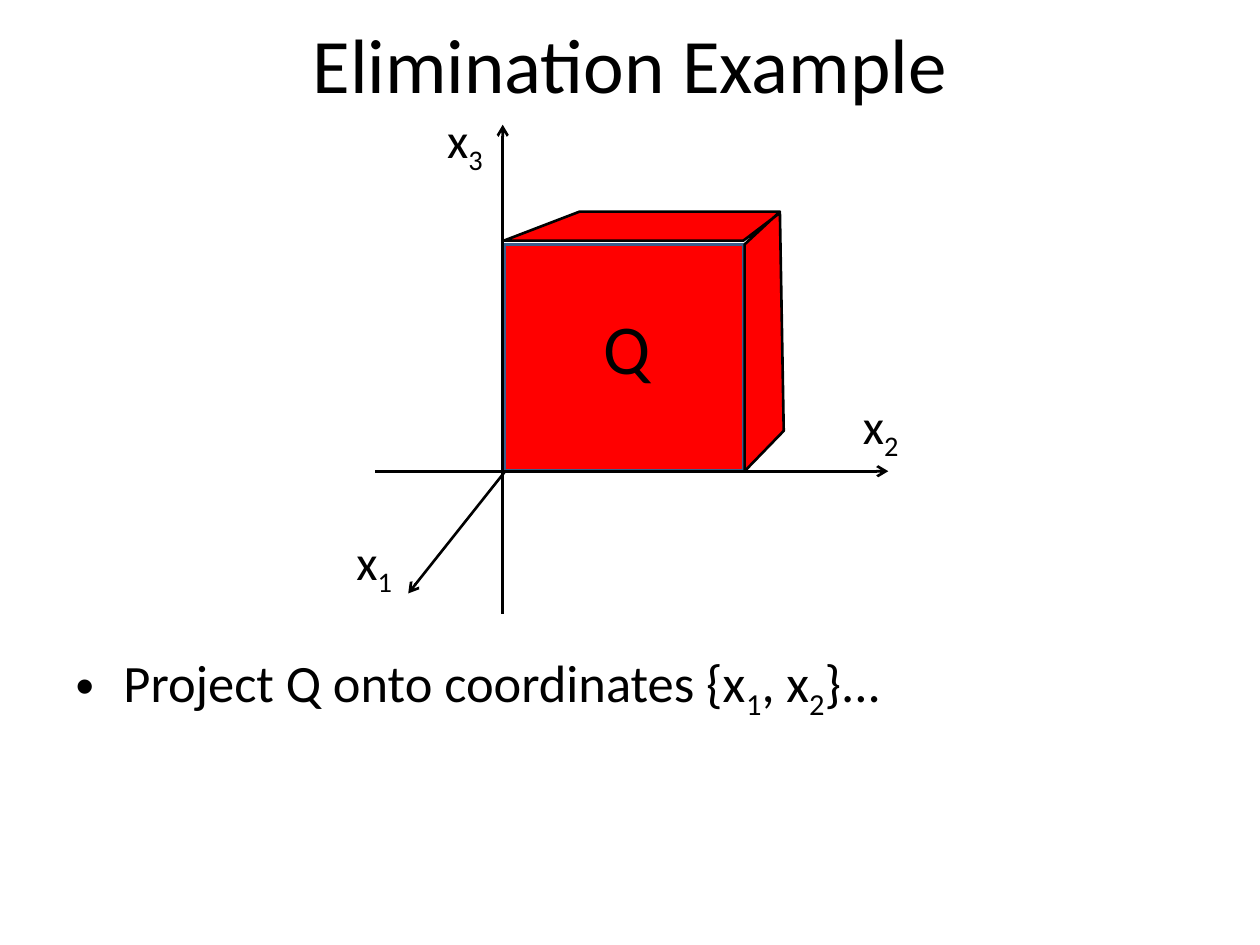
from lxml import etree
from pptx import Presentation
from pptx.dml.color import RGBColor
from pptx.enum.shapes import MSO_CONNECTOR, MSO_SHAPE
from pptx.enum.text import MSO_ANCHOR, MSO_AUTO_SIZE, PP_ALIGN
from pptx.oxml.ns import qn
from pptx.util import Inches, Pt

STRAIGHT = MSO_CONNECTOR.STRAIGHT
RECTANGLE = MSO_SHAPE.RECTANGLE
MIDDLE, TOP = MSO_ANCHOR.MIDDLE, MSO_ANCHOR.TOP
CENTER = PP_ALIGN.CENTER
NO_AUTOFIT, FIT_SHAPE = MSO_AUTO_SIZE.NONE, MSO_AUTO_SIZE.SHAPE_TO_FIT_TEXT

FONT = "Calibri"
COLORS = {"ink": "000000", "solid": "FF0000", "front_edge": "3A5F8C"}


def color(name):
    return RGBColor.from_string(COLORS[name])


def place(shape, box):
    shape.left, shape.top, shape.width, shape.height = map(Inches, box)


def add_runs(paragraph, parts, size):
    """Add text parts in turn; every second part is a subscript."""
    for index, part in enumerate(parts):
        run = paragraph.add_run()
        run.text = part
        run.font.name = FONT
        run.font.size = Pt(size)
        run.font.color.rgb = color("ink")
        if index % 2:
            run.font._element.set("baseline", "-25000")


def paint(shape, fill, line, width):
    shape.shadow.inherit = False
    shape.fill.solid()
    shape.fill.fore_color.rgb = color(fill)
    shape.line.color.rgb = color(line)
    shape.line.width = Pt(width)


def add_axis(slide, start, end):
    axis = slide.shapes.add_connector(STRAIGHT, *map(Inches, start + end))
    axis.line.color.rgb = color("ink")
    axis.line.width = Pt(1.5)
    etree.SubElement(axis.line._get_or_add_ln(), qn("a:tailEnd"), type="arrow")
    etree.SubElement(axis._element.spPr, qn("a:effectLst"))


def add_label(slide, box, parts, size):
    label = slide.shapes.add_textbox(*map(Inches, box))
    label.text_frame.word_wrap = False
    label.text_frame.auto_size = FIT_SHAPE
    add_runs(label.text_frame.paragraphs[0], parts, size)


def fill_title(slide, box, text):
    title = slide.shapes.title
    place(title, box)
    title.text_frame.vertical_anchor = MIDDLE
    paragraph = title.text_frame.paragraphs[0]
    paragraph.alignment = CENTER
    add_runs(paragraph, [text], 44)


def draw_cube_diagram(slide, box):
    left, top, width, height = box

    def at(x, y):
        return left + x, top + y

    # Front face, then the top and right faces as one outline
    front = slide.shapes.add_shape(RECTANGLE, *map(Inches, at(1.27, 1.12) + (1.9, 1.8)))
    paint(front, "solid", "front_edge", 2)
    corners = [(1.27, 1.09), (1.87, 0.86), (3.46, 0.86), (3.18, 1.12),
               (3.18, 2.92), (3.49, 2.6), (3.46, 0.87), (3.17, 1.09)]
    outline = [tuple(map(Inches, at(x, y))) for x, y in corners]
    builder = slide.shapes.build_freeform(*outline[0])
    builder.add_line_segments(outline[1:], close=True)
    paint(builder.convert_to_shape(), "solid", "ink", 1.5)

    # Axes: x3 up, x2 to the right, x1 towards the viewer
    add_axis(slide, at(1.26, height), at(1.26, 0.17))
    add_axis(slide, at(0.25, 2.92), at(4.32, 2.92))
    add_axis(slide, at(1.28, 2.92), at(0.51, 3.89))

    # Axis names and the name of the solid
    axis_names = {"1": (0, 3.35), "2": (width - 0.51, 2.27), "3": (0.72, 0)}
    for subscript, corner in axis_names.items():
        add_label(slide, at(*corner) + (0.51, 0.57), ["x", subscript], 28)
    add_label(slide, at(1.96, 1.55) + (0.58, 0.77), ["Q"], 40)


def fill_body(slide, box, parts):
    body = slide.placeholders[1]
    place(body, box)
    frame = body.text_frame
    frame.vertical_anchor = TOP
    frame.auto_size = NO_AUTOFIT
    paragraph = frame.paragraphs[0]
    properties = paragraph._p.get_or_add_pPr()
    properties.set("marL", str(Inches(0.38)))
    properties.set("indent", str(-Inches(0.38)))
    etree.SubElement(properties, qn("a:buFont"), typeface="Arial")
    etree.SubElement(properties, qn("a:buChar"), char="•")
    add_runs(paragraph, parts, 30)


def main():
    prs = Presentation()
    prs.slide_width, prs.slide_height = Inches(10), Inches(7.5)
    slide = prs.slides.add_slide(prs.slide_layouts[1])
    fill_title(slide, (0.5, 0, 9, 1), "Elimination Example")
    draw_cube_diagram(slide, (2.73, 0.82, 4.53, 4.05))
    fill_body(slide, (0.5, 5.11, 9.2, 1.86),
              ["Project Q onto coordinates {x", "1", ", x", "2", "}..."])
    prs.save("out.pptx")


if __name__ == "__main__":
    main()
